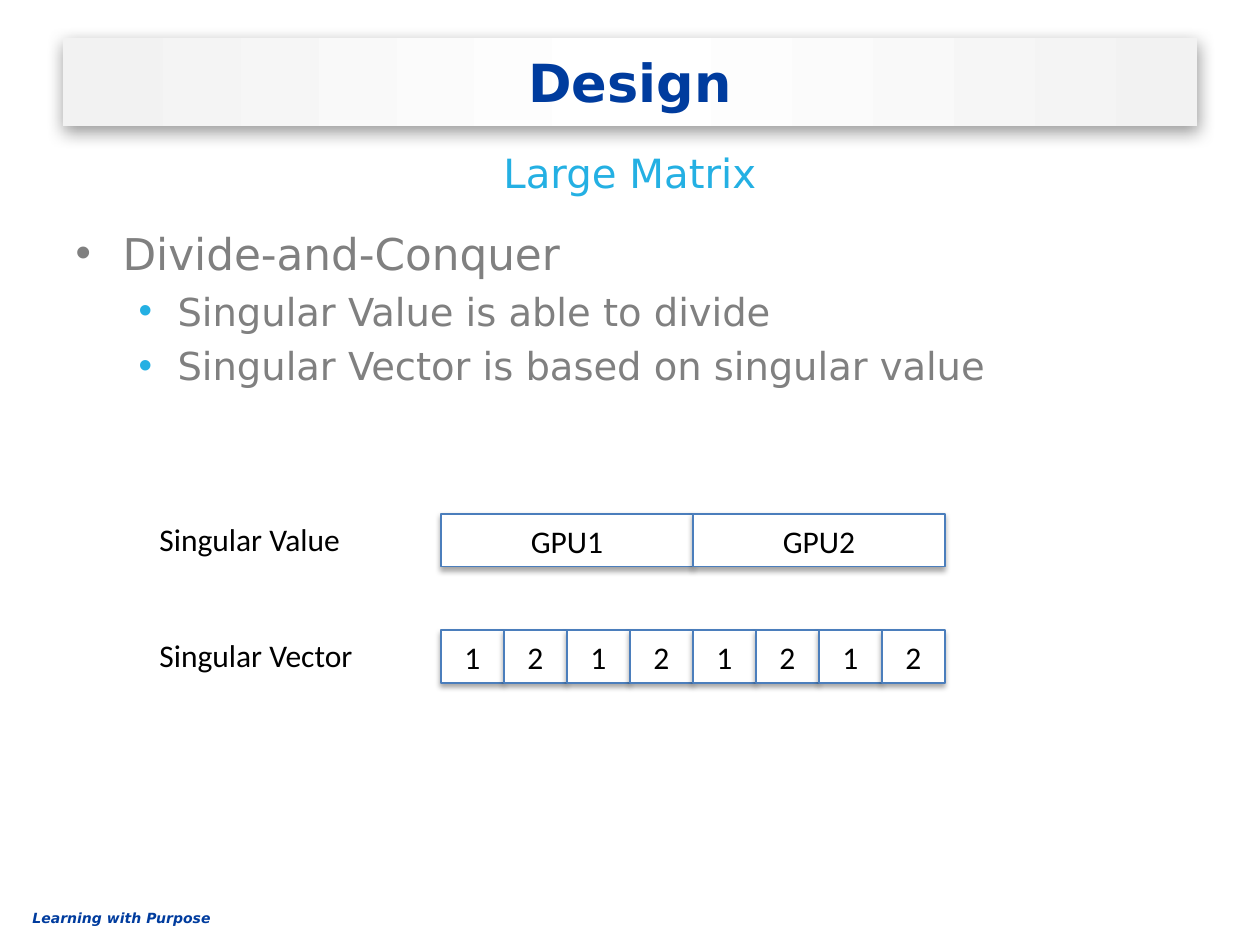
import pptx
import pptx.dml.color
import pptx.enum.shapes
import pptx.enum.text
import pptx.oxml
import pptx.oxml.ns
import pptx.util

PX = 914400 // 126
ALIGN = pptx.enum.text.PP_ALIGN
ANCHOR = pptx.enum.text.MSO_ANCHOR
THEME = {
    "navy": "003C9E", "sky": "24B0E3", "gray": "808080", "black": "000000",
    "white": "FFFFFF", "border": "4B7EBC", "band": "F2F2F2",
    "head_font": "DejaVu Sans", "label_font": "Calibri",
    "title": 30, "subtitle": 23, "list": 25, "sublist": 22, "label": 18, "footer": 8,
}
NS = pptx.oxml.ns.nsdecls("a")


def set_text(p, text, size, color, font="head_font", bold=False, italic=False,
             align=ALIGN.LEFT, before=0):
    p.alignment = align
    p.space_before = pptx.util.Pt(before)
    r = p.add_run()
    r.text = text
    r.font.name = THEME[font]
    r.font.size = pptx.util.Pt(THEME[size])
    r.font.bold, r.font.italic = bold, italic
    r.font.color.rgb = pptx.dml.color.RGBColor.from_string(THEME[color])


def add_shadow(sp, alpha, blur, dist):
    for old in sp._element.spPr.findall(pptx.oxml.ns.qn("a:effectLst")):
        sp._element.spPr.remove(old)
    sp._element.spPr.append(pptx.oxml.parse_xml(
        f'<a:effectLst {NS}><a:outerShdw blurRad="{pptx.util.Pt(blur)}" '
        f'dist="{pptx.util.Pt(dist)}" dir="5400000" rotWithShape="0">'
        f'<a:srgbClr val="{THEME["black"]}"><a:alpha val="{alpha * 1000}"/></a:srgbClr>'
        '</a:outerShdw></a:effectLst>'))


prs = pptx.Presentation()
prs.slide_width, prs.slide_height = 1260 * PX, 945 * PX
s = prs.slides.add_slide(prs.slide_layouts[3])
title, body, subtitle = s.placeholders

# Placeholders: title, list and subtitle
for sp, top, height, anchor in ((title, 38, 88, ANCHOR.MIDDLE),
                                (body, 220, 672, ANCHOR.TOP),
                                (subtitle, 136, 73, ANCHOR.MIDDLE)):
    sp.left, sp.top, sp.width, sp.height = 63 * PX, top * PX, 1134 * PX, height * PX
    sp.text_frame.auto_size = pptx.enum.text.MSO_AUTO_SIZE.NONE
    sp.text_frame.vertical_anchor = anchor

# Title band
stops = "".join(f'<a:gs pos="{pos * 1000}"><a:srgbClr val="{THEME[color]}"/></a:gs>'
                for pos, color in ((2, "band"), (50, "white"), (100, "band")))
title._element.spPr.append(pptx.oxml.parse_xml(
    f'<a:gradFill {NS}><a:gsLst>{stops}</a:gsLst><a:lin ang="0" scaled="0"/></a:gradFill>'))
add_shadow(title, 40, 10, 3)
set_text(title.text_frame.paragraphs[0], "Design", "title", "navy",
         bold=True, align=ALIGN.CENTER)

# Subtitle
p = subtitle.text_frame.paragraphs[0]
pPr = p._p.get_or_add_pPr()
pPr.set("marL", "0")
pPr.set("indent", "0")
pPr.append(pptx.oxml.parse_xml(f"<a:buNone {NS}/>"))
set_text(p, "Large Matrix", "subtitle", "sky", align=ALIGN.CENTER)

# Bulleted list
tf = body.text_frame
for i, (text, level) in enumerate((("Divide-and-Conquer", 0),
                                   ("Singular Value is able to divide", 1),
                                   ("Singular Vector is based on singular value", 1))):
    p = tf.add_paragraph() if i else tf.paragraphs[0]
    p.level = level
    margin, hang, size, bullet = ((47, 47, "list", "gray"), (102, 39, "sublist", "sky"))[level]
    pPr = p._p.get_or_add_pPr()
    pPr.set("marL", str(margin * PX))
    pPr.set("indent", str(-hang * PX))
    for xml in (f'<a:buClr {NS}><a:srgbClr val="{THEME[bullet]}"/></a:buClr>',
                f'<a:buFont {NS} typeface="Arial"/>',
                f'<a:buChar {NS} char="•"/>'):
        pPr.append(pptx.oxml.parse_xml(xml))
    set_text(p, text, size, "gray", before=5 if i else 0)

# Rows of equal cells, each with its label
for label, top, cells in (("Singular Value", 514, ["GPU1", "GPU2"]),
                          ("Singular Vector", 630, ["1", "2"] * 4)):
    width = 504 // len(cells)
    for i, text in enumerate(cells):
        sp = s.shapes.add_shape(pptx.enum.shapes.MSO_SHAPE.RECTANGLE,
                                (441 + i * width) * PX, top * PX, width * PX, 53 * PX)
        sp.fill.solid()
        sp.fill.fore_color.rgb = pptx.dml.color.RGBColor.from_string(THEME["white"])
        sp.line.color.rgb = pptx.dml.color.RGBColor.from_string(THEME["border"])
        sp.line.width = pptx.util.Pt(0.75)
        add_shadow(sp, 35, 3.1, 1.8)
        sp.text_frame.vertical_anchor = ANCHOR.MIDDLE
        set_text(sp.text_frame.paragraphs[0], text, "label", "black",
                 font="label_font", align=ALIGN.CENTER)
    sp = s.shapes.add_textbox(147 * PX, top * PX, 223 * PX, 50 * PX)
    sp.text_frame.word_wrap = False
    set_text(sp.text_frame.paragraphs[0], label, "label", "black", font="label_font")

# Footer motto
sp = s.shapes.add_textbox(20 * PX, 903 * PX, 465 * PX, 30 * PX)
sp.text_frame.word_wrap = True
set_text(sp.text_frame.paragraphs[0], "Learning with Purpose", "footer", "navy",
         bold=True, italic=True)

prs.save("out.pptx")
